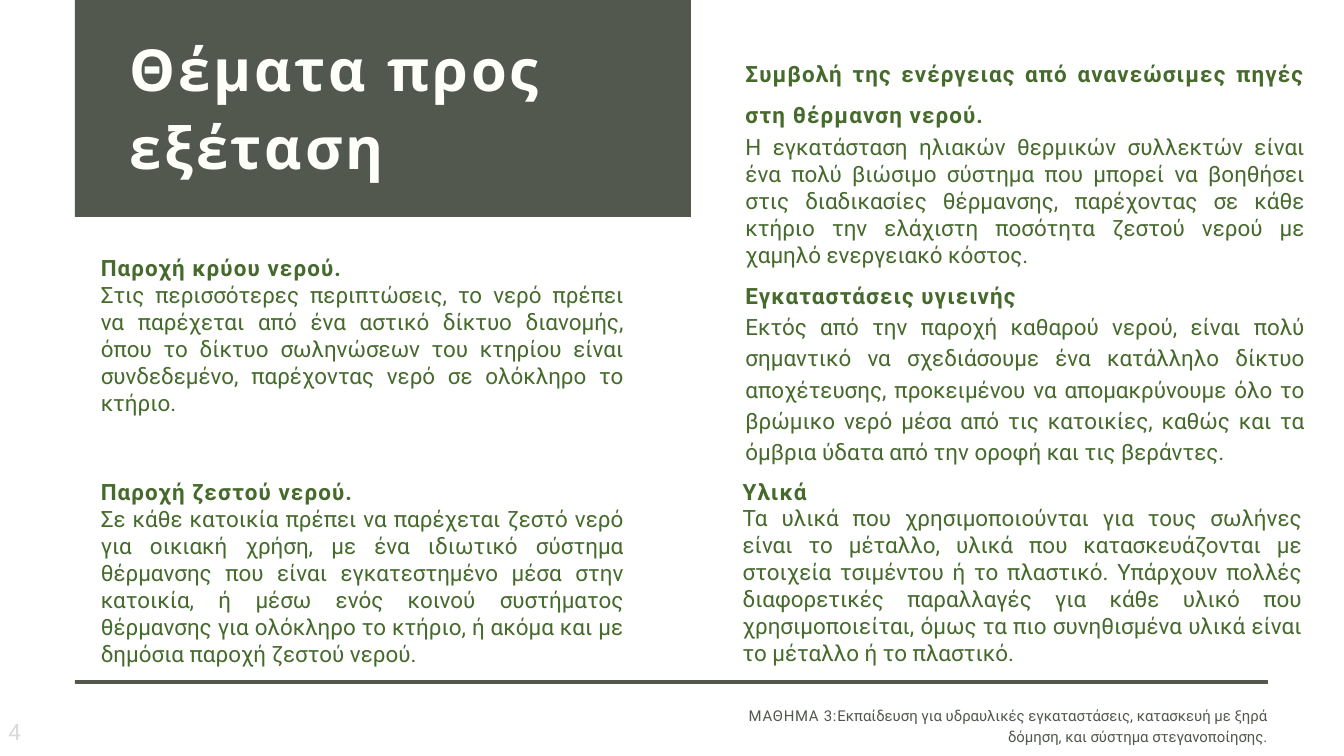
from pptx import Presentation
from pptx.dml.color import RGBColor
from pptx.enum.shapes import MSO_SHAPE as Shape
from pptx.enum.text import MSO_ANCHOR as Anchor, MSO_AUTO_SIZE as AutoSize, PP_ALIGN as Align
from pptx.util import Emu, Pt

PX = 9525
COLORS = {
    "slate": "52584D",
    "green": "456A2C",
    "ivory": "FEFFF8",
    "silver": "D9D9D9",
}

COLD_WATER = (
    "Παροχή κρύου νερού.",
    "Στις περισσότερες περιπτώσεις, το νερό πρέπει να παρέχεται από ένα αστικό δίκτυο "
    "διανομής, όπου το δίκτυο σωληνώσεων του κτηρίου είναι συνδεδεμένο, παρέχοντας νερό "
    "σε ολόκληρο το κτήριο.",
)
HOT_WATER = (
    "Παροχή ζεστού νερού.",
    "Σε κάθε κατοικία πρέπει να παρέχεται ζεστό νερό για οικιακή χρήση, με ένα ιδιωτικό "
    "σύστημα θέρμανσης που είναι εγκατεστημένο μέσα στην κατοικία, ή μέσω ενός κοινού "
    "συστήματος θέρμανσης για ολόκληρο το κτήριο, ή ακόμα και με δημόσια παροχή ζεστού νερού.",
)
RENEWABLES = (
    "Συμβολή της ενέργειας από ανανεώσιμες πηγές στη θέρμανση νερού.",
    "Η εγκατάσταση ηλιακών θερμικών συλλεκτών είναι ένα πολύ βιώσιμο σύστημα που μπορεί "
    "να βοηθήσει στις διαδικασίες θέρμανσης, παρέχοντας σε κάθε κτήριο την ελάχιστη "
    "ποσότητα ζεστού νερού με χαμηλό ενεργειακό κόστος.",
)
SANITATION = (
    "Εγκαταστάσεις υγιεινής",
    "Εκτός από την παροχή καθαρού νερού, είναι πολύ σημαντικό να σχεδιάσουμε ένα κατάλληλο "
    "δίκτυο αποχέτευσης, προκειμένου να απομακρύνουμε όλο το βρώμικο νερό μέσα από τις "
    "κατοικίες, καθώς και τα όμβρια ύδατα από την οροφή και τις βεράντες.",
)
MATERIALS = (
    "Υλικά",
    "Τα υλικά που χρησιμοποιούνται για τους σωλήνες είναι το μέταλλο, υλικά που "
    "κατασκευάζονται με στοιχεία τσιμέντου ή το πλαστικό. Υπάρχουν πολλές διαφορετικές "
    "παραλλαγές για κάθε υλικό που χρησιμοποιείται, όμως τα πιο συνηθισμένα υλικά είναι "
    "το μέταλλο ή το πλαστικό.",
)


def px(*lengths):
    """Convert pixel lengths to EMU."""
    return [Emu(length * PX) for length in lengths]


def rgb(name):
    """Look up a palette colour."""
    return RGBColor.from_string(COLORS[name])


def write(paragraph, text, size=24, color="green", font="Roboto", bold=False,
          tracking=0, align=Align.LEFT, leading=None, after=0):
    """Add a formatted run to a paragraph; tracking is in points."""
    paragraph.alignment = align
    paragraph.line_spacing = leading
    paragraph.space_after = Pt(after)
    run = paragraph.add_run()
    run.text = text
    run.font.name = font
    run.font.size = Pt(size)
    run.font.bold = bold
    run.font.color.rgb = rgb(color)
    run._r.get_or_add_rPr().set("spc", str(round(tracking * 100)))


def prepare(frame, anchor=Anchor.TOP):
    """Make a text frame wrap with no margins and return its first paragraph."""
    frame.word_wrap = True
    frame.auto_size = AutoSize.NONE
    frame.vertical_anchor = anchor
    frame.margin_left = frame.margin_right = frame.margin_top = frame.margin_bottom = 0
    return frame.paragraphs[0]


def add_bar(slide, box):
    """Draw a plain slate rectangle."""
    bar = slide.shapes.add_shape(Shape.RECTANGLE, *px(*box))
    bar.shadow.inherit = False
    bar.fill.solid()
    bar.fill.fore_color.rgb = rgb("slate")
    bar.line.fill.background()
    return bar


def add_header(slide, left, top, width, height):
    """Place the title on its slate panel."""
    panel = add_bar(slide, (left, top, width, height))
    title = slide.shapes.title
    panel._element.addnext(title._element)
    title.left, title.top, title.width, title.height = px(left + 78, top + 69, width - 105, height - 120)
    write(prepare(title.text_frame), "Θέματα προς εξέταση", size=62, color="ivory",
          font="League Spartan", bold=True, tracking=3.1, leading=Pt(83.7))


def add_topic(slide, box, topic, heading_format=None, body_format=None):
    """Place a bold heading over its justified body text."""
    heading, body = topic
    frame = slide.shapes.add_textbox(*px(*box)).text_frame
    heading_format = heading_format or {"leading": Pt(33.6)}
    write(prepare(frame), heading, bold=True, tracking=1.2, **heading_format)
    write(frame.add_paragraph(), body, align=Align.JUSTIFY, **(body_format or {}))


def add_footer(slide, left, top, width, height):
    """Place the rule, the lesson name and the page number."""
    rule = add_bar(slide, (left, top, width, 4))
    rule.line.color.rgb = rgb("slate")
    rule.line.width = Pt(0.75)

    lesson_box = px(left + width - 799, top + 33, 799, height - 33)
    lesson = prepare(slide.shapes.add_textbox(*lesson_box).text_frame)
    lesson_format = {"size": 16, "color": "slate", "align": Align.RIGHT, "leading": Pt(22.4)}
    write(lesson, "ΜΑΘΗΜΑ 3:", tracking=0.8, **lesson_format)
    write(lesson, "Εκπαίδευση για υδραυλικές εγκαταστάσεις, κατασκευή με ξηρά δόμηση, "
          "και σύστημα στεγανοποίησης.", **lesson_format)

    number_box = px(left - 95, top + 54, 214, 38)
    number = prepare(slide.shapes.add_textbox(*number_box).text_frame, Anchor.MIDDLE)
    write(number, "4", color="silver", tracking=1.2)


def main():
    """Build and save the slide."""
    deck = Presentation()
    deck.slide_width, deck.slide_height = px(1920, 1080)
    slide = deck.slides.add_slide(deck.slide_layouts[5])

    add_header(slide, 107, -33, 880, 343)
    add_topic(slide, (144, 357, 747, 201), COLD_WATER)
    add_topic(slide, (144, 677, 747, 290), HOT_WATER)
    add_topic(slide, (1065, 67, 799, 319), RENEWABLES,
              heading_format={"align": Align.JUSTIFY, "leading": 1.5, "after": 6})
    add_topic(slide, (1065, 396, 799, 274), SANITATION,
              body_format={"leading": Pt(33.6), "after": 6})
    add_topic(slide, (1061, 676, 799, 290), MATERIALS)
    add_footer(slide, 107, 972, 1704, 108)

    deck.save("out.pptx")


if __name__ == "__main__":
    main()
